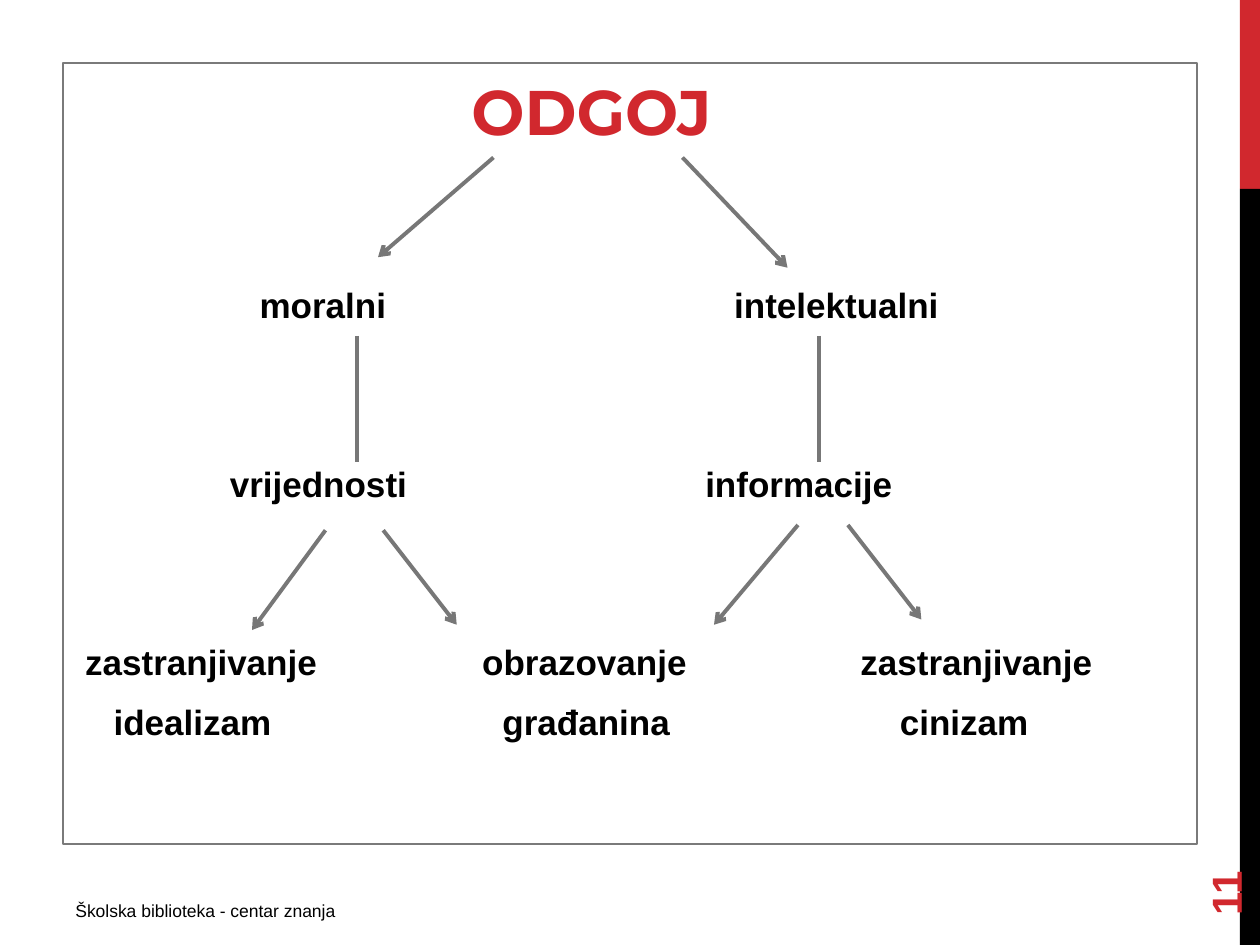
import pptx
import pptx.dml.color
import pptx.enum.shapes
import pptx.enum.text
import pptx.oxml.ns
import pptx.util
from lxml import etree

Pt = pptx.util.Pt
RED = pptx.dml.color.RGBColor(0xD1, 0x28, 0x2E)
BLACK = pptx.dml.color.RGBColor(0, 0, 0)
GREY = pptx.dml.color.RGBColor(0x77, 0x77, 0x77)
FRAME_GREY = pptx.dml.color.RGBColor(0x7A, 0x7A, 0x7A)
BODY = {"name": "Arial", "size": Pt(20), "bold": True}
TITLE = {"name": "Montserrat", "size": Pt(36), "bold": True}
FOOTER = {"name": "Arial", "size": Pt(10), "bold": False}
NUMBER = {"name": "Arial", "size": Pt(24), "bold": True}
LABEL_WIDTH, LABEL_HEIGHT = 180, 32

LABELS = {
    174: [("moralni", 184.5), ("intelektualni", 478)],
    276: [("vrijednosti", 182), ("informacije", 456.5)],
    378: [("zastranjivanje", 115), ("obrazovanje", 334), ("zastranjivanje", 558)],
    412: [("idealizam", 110), ("građanina", 335), ("cinizam", 551)],
}
ARROWS = [
    (282, 90, 216, 147), (390, 90, 450, 153),
    (186, 303, 144, 360), (219, 303, 261, 357),
    (484.5, 300, 526.5, 354), (456, 300, 408, 357),
]
LINKS = [(204, 192, 204, 264), (468, 192, 468, 264)]


def add_box(slide, bounds, fill=None, outline=None):
    """Add a rectangle with an optional fill and outline."""
    box = slide.shapes.add_shape(
        pptx.enum.shapes.MSO_SHAPE.RECTANGLE, *map(Pt, bounds))
    box.shadow.inherit = False
    if fill is None:
        box.fill.background()
    else:
        box.fill.solid()
        box.fill.fore_color.rgb = fill
    if outline is None:
        box.line.fill.background()
    else:
        box.line.color.rgb = outline
        box.line.width = Pt(0.75)


def add_text(slide, words, bounds, style, color=BLACK, anchor="TOP", align="LEFT", turn=0):
    """Add one line of styled text."""
    holder = slide.shapes.add_textbox(*map(Pt, bounds))
    holder.rotation = turn
    frame = holder.text_frame
    frame.word_wrap = True
    frame.vertical_anchor = pptx.enum.text.MSO_ANCHOR[anchor]
    line = frame.paragraphs[0]
    line.alignment = pptx.enum.text.PP_ALIGN[align]
    run = line.add_run()
    run.text = words
    for key, value in style.items():
        setattr(run.font, key, value)
    run.font.color.rgb = color


def add_label(slide, words, center, middle, style=BODY, color=BLACK):
    """Add a diagram label around its centre point."""
    bounds = (center - LABEL_WIDTH / 2, middle - LABEL_HEIGHT / 2,
              LABEL_WIDTH, LABEL_HEIGHT)
    add_text(slide, words, bounds, style, color, "MIDDLE", "CENTER")


def add_link(slide, ends, arrow=False):
    """Add a straight link, with an arrowhead at its end if asked."""
    link = slide.shapes.add_connector(
        pptx.enum.shapes.MSO_CONNECTOR.STRAIGHT, *map(Pt, ends))
    link.line.color.rgb = GREY
    link.line.width = Pt(2.25)
    if arrow:
        etree.SubElement(link.line._get_or_add_ln(),
                         pptx.oxml.ns.qn("a:tailEnd"), type="arrow")
    etree.SubElement(link._element.spPr, pptx.oxml.ns.qn("a:effectLst"))


def main():
    """Build the slide and save it."""
    deck = pptx.Presentation()
    deck.slide_width, deck.slide_height = Pt(720), Pt(540)
    slide = deck.slides.add_slide(deck.slide_layouts[6])
    add_box(slide, (708.5, 0, 11.5, 108), fill=RED)
    add_box(slide, (708.5, 108, 11.5, 432), fill=BLACK)
    add_box(slide, (36, 36, 648, 446.4), outline=FRAME_GREY)
    add_label(slide, "ODGOJ", 338, 63, TITLE, RED)
    for middle, row in LABELS.items():
        for words, center in row:
            add_label(slide, words, center, middle)
    add_text(slide, "Školska biblioteka - centar znanja", (36, 511, 270, 22), FOOTER)
    add_text(slide, "11", (648, 464, 104, 29), NUMBER, RED, "MIDDLE", turn=270)
    for ends in ARROWS:
        add_link(slide, ends, arrow=True)
    for ends in LINKS:
        add_link(slide, ends)
    deck.save("out.pptx")


if __name__ == "__main__":
    main()
